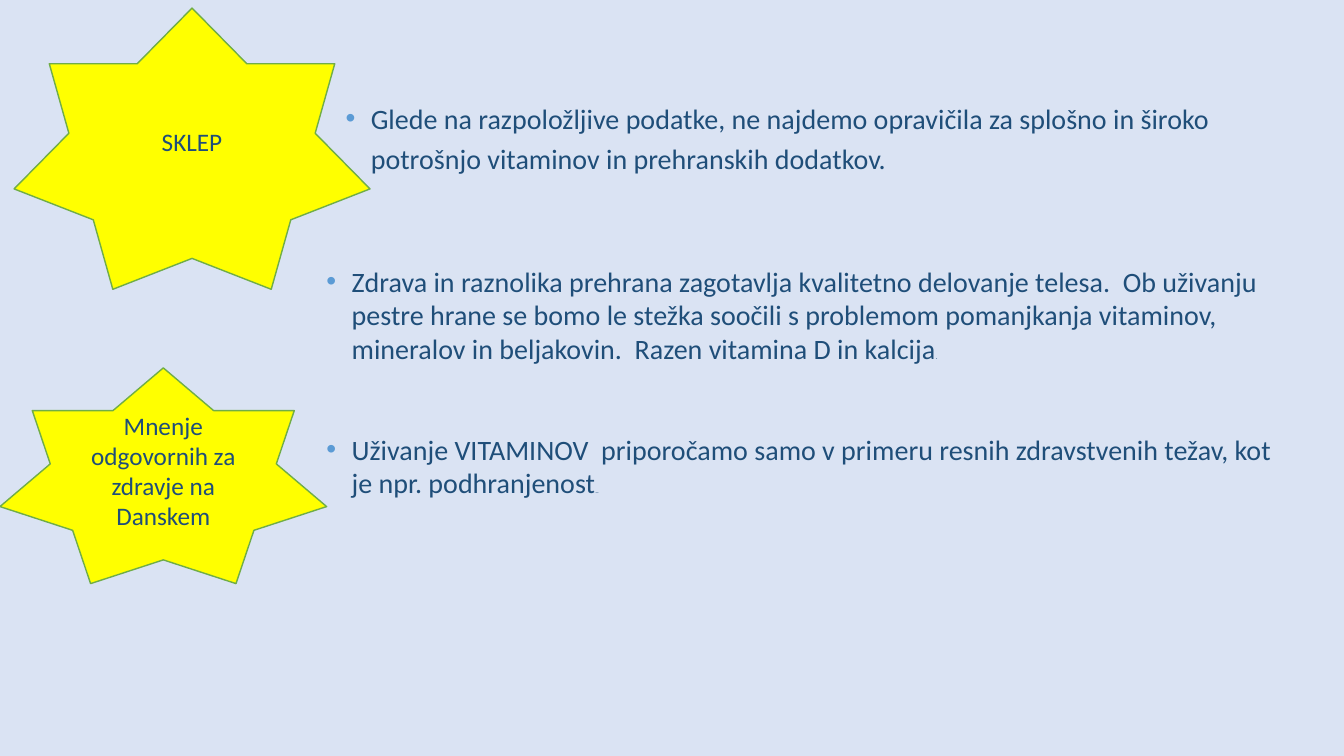
from lxml import etree
from pptx import Presentation
from pptx.dml.color import RGBColor
from pptx.enum.shapes import MSO_SHAPE as Shape
from pptx.enum.text import MSO_ANCHOR as Anchor, PP_ALIGN as Align
from pptx.oxml.ns import qn
from pptx.util import Inches, Pt


def color(value):
    return RGBColor.from_string(value)


class ConclusionSlide:
    font_name = "Calibri"
    text_color = "1F4E79"
    bullet_color = "5B9BD5"
    star_fill = "FFFF00"
    star_line = "70AD47"
    background = "DAE3F3"

    def __init__(self, presentation):
        self.slide = presentation.slides.add_slide(presentation.slide_layouts[6])
        fill = self.slide.background.fill
        fill.solid()
        fill.fore_color.rgb = color(self.background)

    def style(self, font, size):
        font.name = self.font_name
        font.size = Pt(size)
        font.color.rgb = color(self.text_color)

    def star(self, left, top, width, height, text):
        shape = self.slide.shapes.add_shape(
            Shape.STAR_7_POINT, Inches(left), Inches(top), Inches(width), Inches(height))
        shape.shadow.inherit = False
        shape.fill.solid()
        shape.fill.fore_color.rgb = color(self.star_fill)
        shape.line.color.rgb = color(self.star_line)
        shape.line.width = Pt(1)
        frame = shape.text_frame
        frame.word_wrap = True
        frame.vertical_anchor = Anchor.MIDDLE
        paragraph = frame.paragraphs[0]
        paragraph.text = text
        paragraph.alignment = Align.CENTER
        self.style(paragraph.font, 18)

    def add_bullet(self, paragraph):
        properties = paragraph._p.get_or_add_pPr()
        properties.set("marL", str(Inches(0.25)))
        properties.set("indent", str(-Inches(0.25)))
        bullet_color = etree.SubElement(properties, qn("a:buClr"))
        etree.SubElement(bullet_color, qn("a:srgbClr"), val=self.bullet_color)
        etree.SubElement(properties, qn("a:buFont"), typeface="Arial")
        etree.SubElement(properties, qn("a:buChar"), char="•")

    def bullets(self, left, top, width, height, items, inset=0.05, line_spacing=1.0, gap=0):
        box = self.slide.shapes.add_textbox(
            Inches(left), Inches(top), Inches(width), Inches(height))
        frame = box.text_frame
        frame.word_wrap = True
        frame.margin_top = Inches(inset)
        for index, (text, small_ending) in enumerate(items):
            paragraph = frame.add_paragraph() if index else frame.paragraphs[0]
            self.add_bullet(paragraph)
            paragraph.line_spacing = line_spacing
            paragraph.space_before = Pt(gap if index else 0)
            self.style(paragraph.font, 20)
            paragraph.add_run().text = text
            if small_ending:
                ending = paragraph.add_run()
                ending.text = small_ending
                ending.font.size = Pt(5)


def main():
    presentation = Presentation()
    presentation.slide_width = Inches(13.33)
    presentation.slide_height = Inches(7.5)
    conclusion = ConclusionSlide(presentation)
    conclusion.star(0.14, 0.08, 3.53, 2.79, "SKLEP")
    conclusion.bullets(3.33, 0.89, 9.66, 1.05, [
        ("Glede na razpoložljive podatke, ne najdemo opravičila za splošno in široko "
         "potrošnjo vitaminov in prehranskih dodatkov.", ""),
    ], line_spacing=1.2)
    conclusion.bullets(3.14, 2.35, 9.66, 3.23, [
        ("Zdrava in raznolika prehrana zagotavlja kvalitetno delovanje telesa.  Ob uživanju "
         "pestre hrane se bomo le stežka soočili s problemom pomanjkanja vitaminov, "
         "mineralov in beljakovin.  Razen vitamina D in kalcija", "."),
        ("Uživanje VITAMINOV  priporočamo samo v primeru resnih zdravstvenih težav, kot "
         "je npr. podhranjenost", ".."),
    ], inset=0.27, gap=48)
    conclusion.star(0, 3.65, 3.24, 2.14, "Mnenje odgovornih za zdravje na Danskem")
    presentation.save("out.pptx")


if __name__ == "__main__":
    main()
